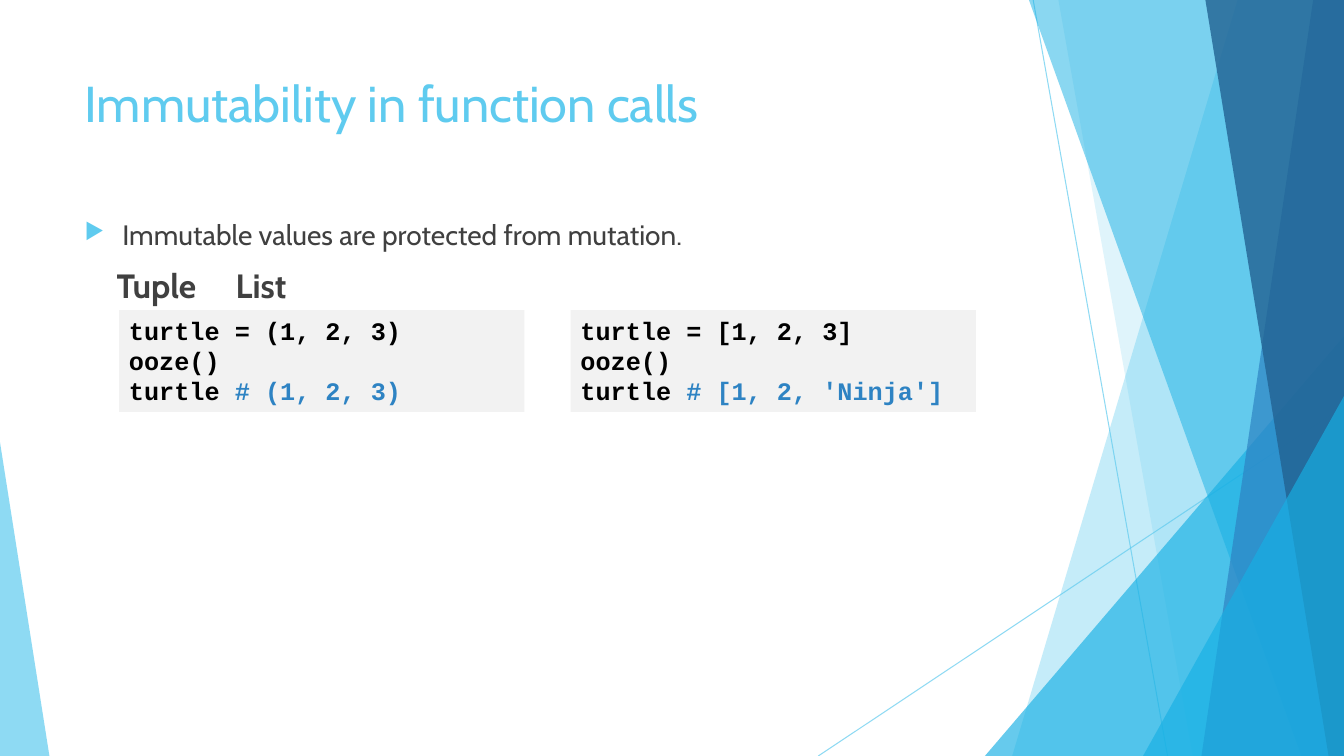
from lxml.etree import SubElement
from pptx import Presentation
from pptx.dml.color import RGBColor
from pptx.enum.shapes import MSO_CONNECTOR as Connector, MSO_SHAPE as Shape
from pptx.enum.text import MSO_ANCHOR as Anchor, PP_ALIGN as Align
from pptx.oxml.ns import qn
from pptx.util import Pt

WIDTH, HEIGHT = 960, 540
SKY = RGBColor(0x5F, 0xCB, 0xEF)
CYAN = RGBColor(0x17, 0xB0, 0xE4)
BLUE = RGBColor(0x2E, 0x83, 0xC3)
NAVY = RGBColor(0x22, 0x62, 0x92)
GRAY = RGBColor(0x40, 0x40, 0x40)
PALE = RGBColor(0xF2, 0xF2, 0xF2)
BLACK = RGBColor(0, 0, 0)


class SlideBuilder:
    """Holds the text style and the current slide."""

    text_font = "Cabin"
    code_font = "Courier New"

    def __init__(self, page):
        self.page = page

    def set_opacity(self, item, percent):
        """Make the explicit colours of an element translucent."""
        for color in item._element.spPr.iter(qn("a:srgbClr")):
            SubElement(color, qn("a:alpha"), val=str(percent * 1000))

    def paint(self, shape, color, opacity=None):
        """Give a shape a flat fill without outline or shadow."""
        shape.shadow.inherit = False
        shape.fill.solid()
        shape.fill.fore_color.rgb = color
        shape.line.fill.background()
        if opacity:
            self.set_opacity(shape, opacity)

    def ray(self, start, end):
        """Draw a thin translucent line."""
        line = self.page.shapes.add_connector(
            Connector.STRAIGHT, *(Pt(value) for value in start + end))
        line.line.color.rgb = SKY
        line.line.width = Pt(0.75)
        self.set_opacity(line, 70)
        SubElement(line._element.spPr, qn("a:effectLst"))

    def band(self, top, bottom, color, opacity):
        """Fill from a slanted left edge to the right edge of the slide."""
        outline = self.page.shapes.build_freeform(Pt(top), 0, scale=1.0)
        corners = [(WIDTH, 0), (WIDTH, HEIGHT), (bottom, HEIGHT)]
        outline.add_line_segments([(Pt(x), Pt(y)) for x, y in corners])
        self.paint(outline.convert_to_shape(), color, opacity)

    def wedge(self, left, top, width, apex, color, opacity):
        """Draw a triangle that stands on the bottom of the slide."""
        triangle = self.page.shapes.add_shape(
            Shape.ISOSCELES_TRIANGLE, Pt(left), Pt(top), Pt(width), Pt(HEIGHT - top))
        triangle.adjustments[0] = apex
        self.paint(triangle, color, opacity)

    def style(self, para, size, color, font=None, bold=False):
        """Set the font of a whole paragraph."""
        para.font.name = font or self.text_font
        para.font.size = Pt(size)
        para.font.color.rgb = color
        para.font.bold = bold

    def text(self, left, top, width, height):
        """Add a wrapping text box and return its text frame."""
        box = self.page.shapes.add_textbox(Pt(left), Pt(top), Pt(width), Pt(height))
        box.text_frame.word_wrap = True
        return box.text_frame

    def bullet(self, para, indent):
        """Put a small triangle bullet before a paragraph."""
        props = para._p.get_or_add_pPr()
        props.set("marL", str(Pt(indent)))
        props.set("indent", str(Pt(-indent)))
        color = SubElement(props, qn("a:buClr"))
        SubElement(color, qn("a:srgbClr"), val=str(SKY))
        SubElement(props, qn("a:buSzPct"), val="80000")
        SubElement(props, qn("a:buChar"), char="▶")

    def columns(self, para, first, second):
        """Indent a line and place its second heading at a tab stop."""
        props = para._p.get_or_add_pPr()
        props.set("marL", "0")
        props.set("indent", str(Pt(first)))
        stops = SubElement(props, qn("a:tabLst"))
        SubElement(stops, qn("a:tab"), pos=str(Pt(second)), algn="l")

    def code(self, left, value, result):
        """Add a code panel whose last line ends in a coloured comment."""
        panel = self.page.shapes.add_shape(
            Shape.RECTANGLE, Pt(left), Pt(221.5), Pt(289.5), Pt(72.7))
        self.paint(panel, PALE)
        frame = panel.text_frame
        frame.word_wrap = True
        frame.vertical_anchor = Anchor.TOP
        lines = [f"turtle = {value}", "ooze()", "turtle "]
        for number, line in enumerate(lines):
            para = frame.add_paragraph() if number else frame.paragraphs[0]
            para.alignment = Align.LEFT
            self.style(para, 18, BLACK, self.code_font, bold=True)
            para.add_run().text = line
        span = para.add_run()
        span.text = f"# {result}"
        span.font.color.rgb = BLUE


def draw_backdrop(slide):
    """Draw the translucent facets at the slide's sides."""
    slide.ray((738, 0), (834, HEIGHT))
    slide.ray((WIDTH, 290), (584.5, HEIGHT))
    slide.band(884, 723, SKY, 36)
    slide.band(756, 852, SKY, 20)
    slide.wedge(703.5, 240, 256.5, 1, CYAN, 66)
    slide.band(735, 929.5, CYAN, 50)
    slide.band(938, 865.5 - 7.3, BLUE, 70)
    slide.band(861, 949, NAVY, 80)
    slide.wedge(816.5, 283, 143.5, 1, CYAN, 66)
    slide.wedge(0, 316, 35.3, 0, SKY, 70)


def draw_content(slide):
    """Add the title, the statement and the two code panels."""
    title = slide.text(53.3, 48, 677, 104).paragraphs[0]
    title.text = "Immutability in function calls"
    slide.style(title, 36, SKY)

    body = slide.text(53.3, 152, 677, 324)
    statement = body.paragraphs[0]
    statement.text = "Immutable values are protected from mutation."
    slide.style(statement, 20, GRAY)
    slide.bullet(statement, 27)

    headings = body.add_paragraph()
    headings.text = "Tuple\tList"
    headings.space_before = Pt(10)
    slide.style(headings, 24, GRAY, bold=True)
    slide.columns(headings, 23, 273.5)

    slide.code(407.5, "[1, 2, 3]", "[1, 2, 'Ninja']")
    slide.code(85, "(1, 2, 3)", "(1, 2, 3)")


def main():
    """Build and save the deck."""
    deck = Presentation()
    deck.slide_width, deck.slide_height = Pt(WIDTH), Pt(HEIGHT)
    slide = SlideBuilder(deck.slides.add_slide(deck.slide_layouts[6]))
    draw_backdrop(slide)
    draw_content(slide)
    deck.save("out.pptx")


main()
